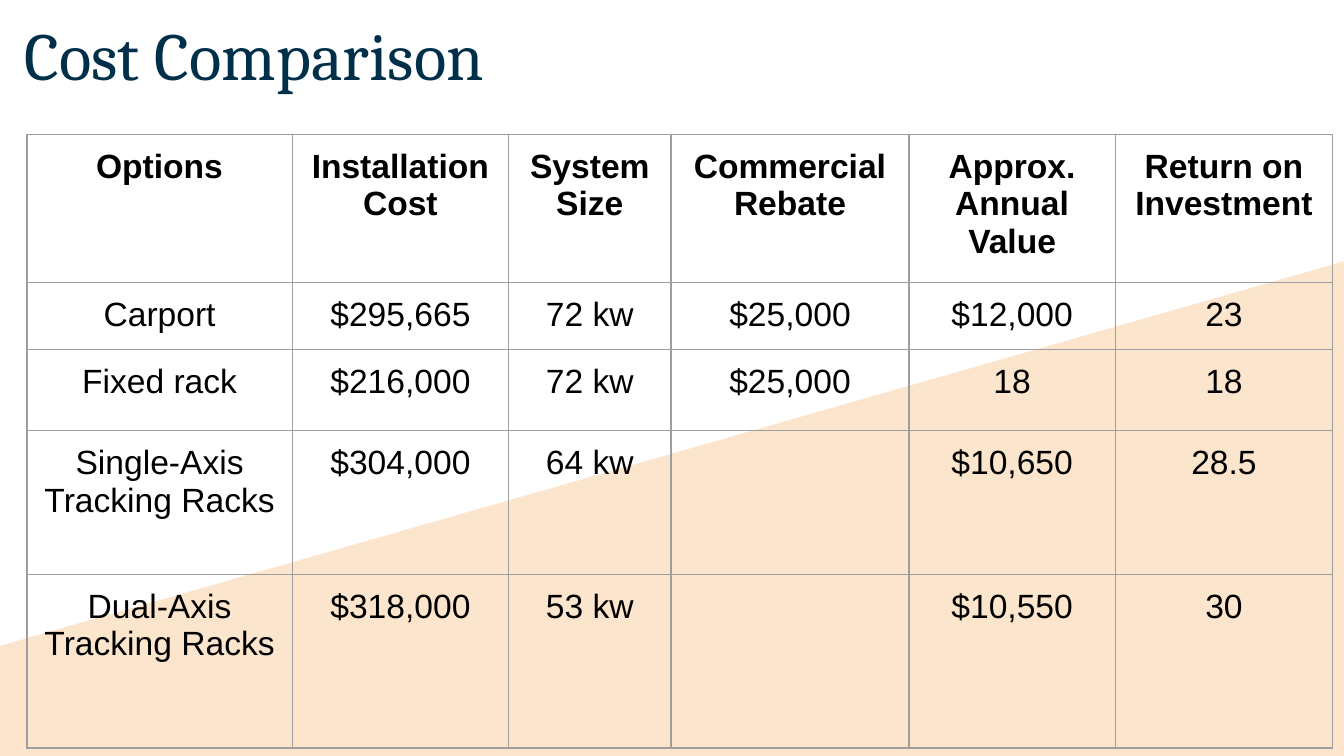
from lxml import etree
from pptx import Presentation
from pptx.dml.color import RGBColor
from pptx.enum import text
from pptx.oxml import ns
from pptx.util import Pt

TITLE = "Cost Comparison"
OPTIONS = [
    ("Options", "Installation Cost", "System Size", "Commercial Rebate",
     "Approx. Annual Value", "Return on Investment"),
    ("Carport", "$295,665", "72 kw", "$25,000", "$12,000", "23"),
    ("Fixed rack", "$216,000", "72 kw", "$25,000", "18", "18"),
    ("Single-Axis Tracking Racks", "$304,000", "64 kw", "", "$10,650", "28.5"),
    ("Dual-Axis Tracking Racks", "$318,000", "53 kw", "", "$10,550", "30"),
]
COLUMN_WIDTHS = [142, 116, 87, 127.5, 110.5, 116.5]
ROW_HEIGHTS = [71.5, 32.5, 43.5, 77, 93]
WIDTH, HEIGHT = 720, 405
WHITE_AREA = [(0, 0), (WIDTH, 0), (WIDTH, 140), (0, 346.5)]
PEACH, WHITE, NAVY, BLACK, GREY = "FCE5CD", "FFFFFF", "002F4A", "000000", "9E9E9E"
INSET = Pt(7.2)


def paint(fill, color):
    fill.solid()
    fill.fore_color.rgb = RGBColor.from_string(color)


def set_insets(box):
    box.margin_left = box.margin_right = box.margin_top = box.margin_bottom = INSET


def add_run(paragraph, words, size, font, color, bold=False):
    run = paragraph.add_run()
    run.text = words
    run.font.size, run.font.name, run.font.bold = Pt(size), font, bold
    paint(run.font.fill, color)


def add_borders(cell, color, weight):
    properties = cell._tc.get_or_add_tcPr()
    for position, side in enumerate(("a:lnL", "a:lnR", "a:lnT", "a:lnB")):
        line = etree.Element(ns.qn(side), w=str(Pt(weight)))
        fill = etree.SubElement(line, ns.qn("a:solidFill"))
        etree.SubElement(fill, ns.qn("a:srgbClr"), val=color)
        properties.insert(position, line)


deck = Presentation()
deck.slide_width, deck.slide_height = Pt(WIDTH), Pt(HEIGHT)
slide = deck.slides.add_slide(deck.slide_layouts[6])
paint(slide.background.fill, PEACH)

outline = slide.shapes.build_freeform(*WHITE_AREA[0], scale=Pt(1))
outline.add_line_segments(WHITE_AREA[1:], close=True)
white_area = outline.convert_to_shape()
paint(white_area.fill, WHITE)
white_area.line.fill.background()
white_area.shadow.inherit = False

title = slide.shapes.add_textbox(Pt(6), 0, Pt(671), Pt(77)).text_frame
title.word_wrap = True
title.vertical_anchor = text.MSO_ANCHOR.TOP
set_insets(title)
add_run(title.paragraphs[0], TITLE, 36, "Cambria", NAVY)

costs = slide.shapes.add_table(
    len(OPTIONS), len(COLUMN_WIDTHS), Pt(14.5), Pt(72),
    Pt(sum(COLUMN_WIDTHS)), Pt(sum(ROW_HEIGHTS))).table
costs.horz_banding = False
for column, width in zip(costs.columns, COLUMN_WIDTHS):
    column.width = Pt(width)
for row, height in zip(costs.rows, ROW_HEIGHTS):
    row.height = Pt(height)
for r, option in enumerate(OPTIONS):
    for c, words in enumerate(option):
        cell = costs.cell(r, c)
        cell.fill.background()
        add_borders(cell, GREY, 0.75)
        set_insets(cell)
        if words:
            paragraph = cell.text_frame.paragraphs[0]
            paragraph.alignment = text.PP_ALIGN.CENTER
            add_run(paragraph, words, 18, "Arial", BLACK, bold=r == 0)

deck.save("out.pptx")
